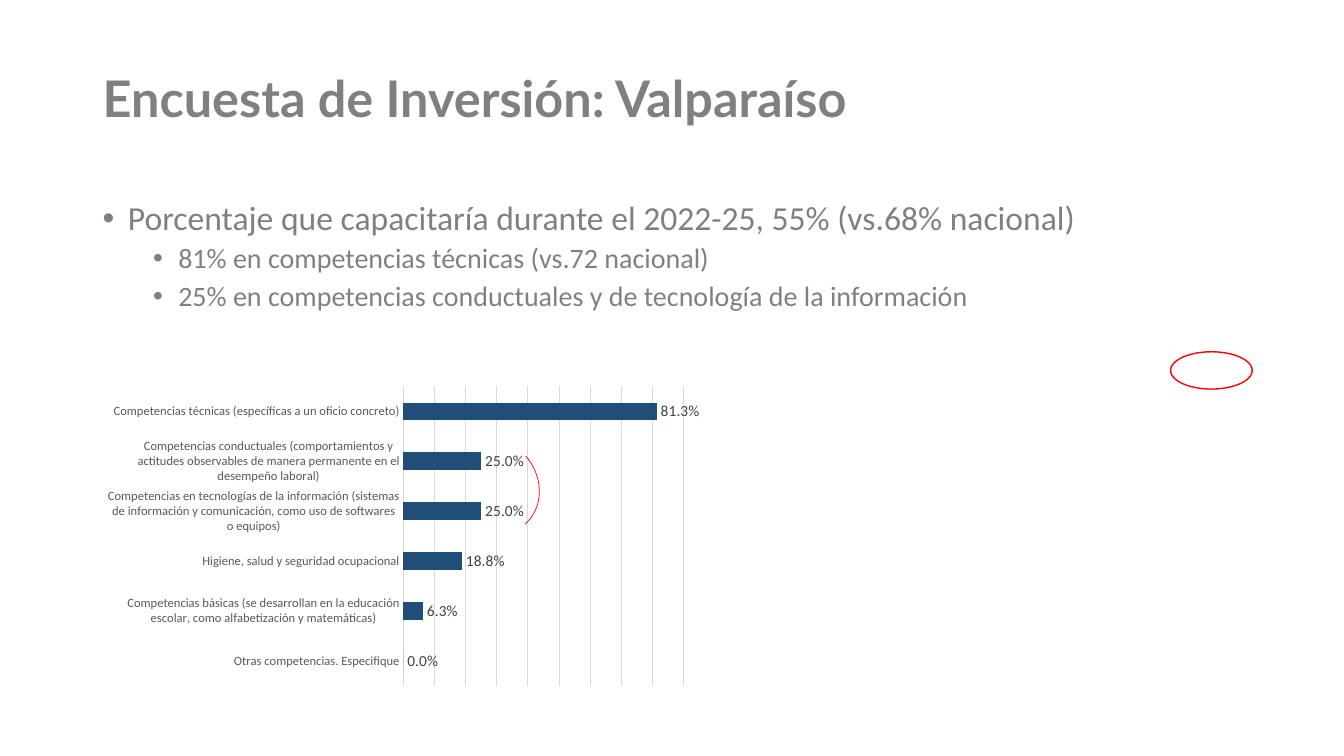
from lxml import etree
from pptx import Presentation
from pptx.chart.data import CategoryChartData
from pptx.dml.color import RGBColor
from pptx.enum.chart import XL_CHART_TYPE as ChartType, XL_LABEL_POSITION as LabelPosition
from pptx.enum.chart import XL_TICK_MARK as TickMark
from pptx.enum.shapes import MSO_SHAPE as Shape
from pptx.enum.text import MSO_ANCHOR as Anchor
from pptx.oxml import parse_xml
from pptx.oxml.ns import nsdecls, qn
from pptx.util import Inches, Pt

GRAY = RGBColor(0x80, 0x80, 0x80)
NAVY = RGBColor(0x1F, 0x4E, 0x79)
RED = RGBColor(0xFF, 0x00, 0x00)
GRID = RGBColor(0xD9, 0xD9, 0xD9)
AXIS_TEXT = RGBColor(0x59, 0x59, 0x59)
LABEL_TEXT = RGBColor(0x40, 0x40, 0x40)


def set_font(font, name, size, color):
    font.name = name
    font.size = Pt(size)
    font.color.rgb = color


def add_red_outline(shape_type, left, top, width, height, weight):
    outline = slide.shapes.add_shape(
        shape_type, Inches(left), Inches(top), Inches(width), Inches(height))
    outline.shadow.inherit = False
    outline.fill.background()
    outline.line.color.rgb = RED
    outline.line.width = Pt(weight)
    return outline


prs = Presentation()
prs.slide_width = Inches(13.33)
prs.slide_height = Inches(7.5)
slide = prs.slides.add_slide(prs.slide_layouts[6])

# Title
title = slide.shapes.add_textbox(Inches(0.92), Inches(0.28), Inches(11.5), Inches(1.45)).text_frame
title.word_wrap = True
title.vertical_anchor = Anchor.MIDDLE
heading = title.paragraphs[0]
heading.text = "Encuesta de Inversión: Valparaíso"
heading.line_spacing = 0.9
set_font(heading.font, "Lato", 36, GRAY)
heading.font.bold = True

# Bulleted findings: text, level, left margin, size
findings = [
    ("Porcentaje que capacitaría durante el 2022-25, 55% (vs.68% nacional)", 0, 0.25, 24),
    ("81% en competencias técnicas (vs.72 nacional)", 1, 0.75, 20),
    ("25% en competencias conductuales y de tecnología de la información", 1, 0.75, 20),
]
body = slide.shapes.add_textbox(Inches(0.92), Inches(1.95), Inches(11.5), Inches(4.81)).text_frame
body.word_wrap = True
for number, (text, level, margin, size) in enumerate(findings):
    finding = body.add_paragraph() if number else body.paragraphs[0]
    finding.text = text
    finding.level = level
    finding.line_spacing = 0.9
    if number:
        finding.space_before = Pt(5)
    properties = finding._p.get_or_add_pPr()
    properties.set("marL", str(Inches(margin)))
    properties.set("indent", str(-Inches(0.25)))
    etree.SubElement(properties, qn("a:buFont")).set("typeface", "Arial")
    etree.SubElement(properties, qn("a:buChar")).set("char", "•")
    set_font(finding.font, "Calibri", size, GRAY)

# Ellipse at the right
add_red_outline(Shape.OVAL, 11.61, 3.49, 0.81, 0.37, 1)

# Bar chart of training areas, listed from bottom to top
training_areas = {
    "Otras competencias. Especifique": 0,
    "Competencias básicas (se desarrollan en la educación escolar, "
    "como alfabetización y matemáticas)": 0.063,
    "Higiene, salud y seguridad ocupacional": 0.188,
    "Competencias en tecnologías de la información (sistemas de información "
    "y comunicación, como uso de softwares o equipos)": 0.25,
    "Competencias conductuales (comportamientos y actitudes observables "
    "de manera permanente en el desempeño laboral)": 0.25,
    "Competencias técnicas (específicas a un oficio concreto)": 0.813,
}
chart_data = CategoryChartData(number_format="0.0%")
chart_data.categories = training_areas.keys()
chart_data.add_series("Series 1", training_areas.values())
chart = slide.shapes.add_chart(
    ChartType.BAR_CLUSTERED, Inches(1.07), Inches(3.67), Inches(5.95), Inches(3.3), chart_data).chart
chart.has_legend = False
chart.has_title = False
set_font(chart.font, "Calibri", 10, RGBColor(0, 0, 0))

category_axis = chart.category_axis
category_axis.major_tick_mark = TickMark.NONE
category_axis.format.line.color.rgb = GRID
category_axis.format.line.width = Pt(0.75)
set_font(category_axis.tick_labels.font, "Calibri", 9, AXIS_TEXT)

value_axis = chart.value_axis
value_axis.visible = False
value_axis.minimum_scale = 0
value_axis.maximum_scale = 0.9
value_axis.major_unit = 0.1
value_axis.has_major_gridlines = True
value_axis.major_gridlines.format.line.color.rgb = GRID
value_axis.major_gridlines.format.line.width = Pt(0.75)

bars = chart.plots[0]
bars.gap_width = 182
bars.vary_by_categories = False
bars.series[0].format.fill.solid()
bars.series[0].format.fill.fore_color.rgb = NAVY
bars.has_data_labels = True
labels = bars.data_labels
labels.show_value = True
labels.number_format = "0.0%"
labels.number_format_is_linked = False
labels.position = LabelPosition.OUTSIDE_END
set_font(labels.font, "Calibri", 11, LABEL_TEXT)

# Plot position inside the chart
plot_area = chart._chartSpace.chart.plotArea
for automatic_layout in plot_area.findall(qn("c:layout")):
    plot_area.remove(automatic_layout)
plot_area.insert(0, parse_xml(
    f'<c:layout {nsdecls("c")}><c:manualLayout><c:layoutTarget val="inner"/>'
    '<c:xMode val="edge"/><c:yMode val="edge"/><c:x val="0.49"/><c:y val="0.05"/>'
    '<c:w val="0.47"/><c:h val="0.9"/></c:manualLayout></c:layout>'))

# Arc joining the two 25% bars
arc = add_red_outline(Shape.ARC, 4.37, 4.37, 1.01, 0.9, 0.5)
arc.rotation = 49

prs.save("out.pptx")
